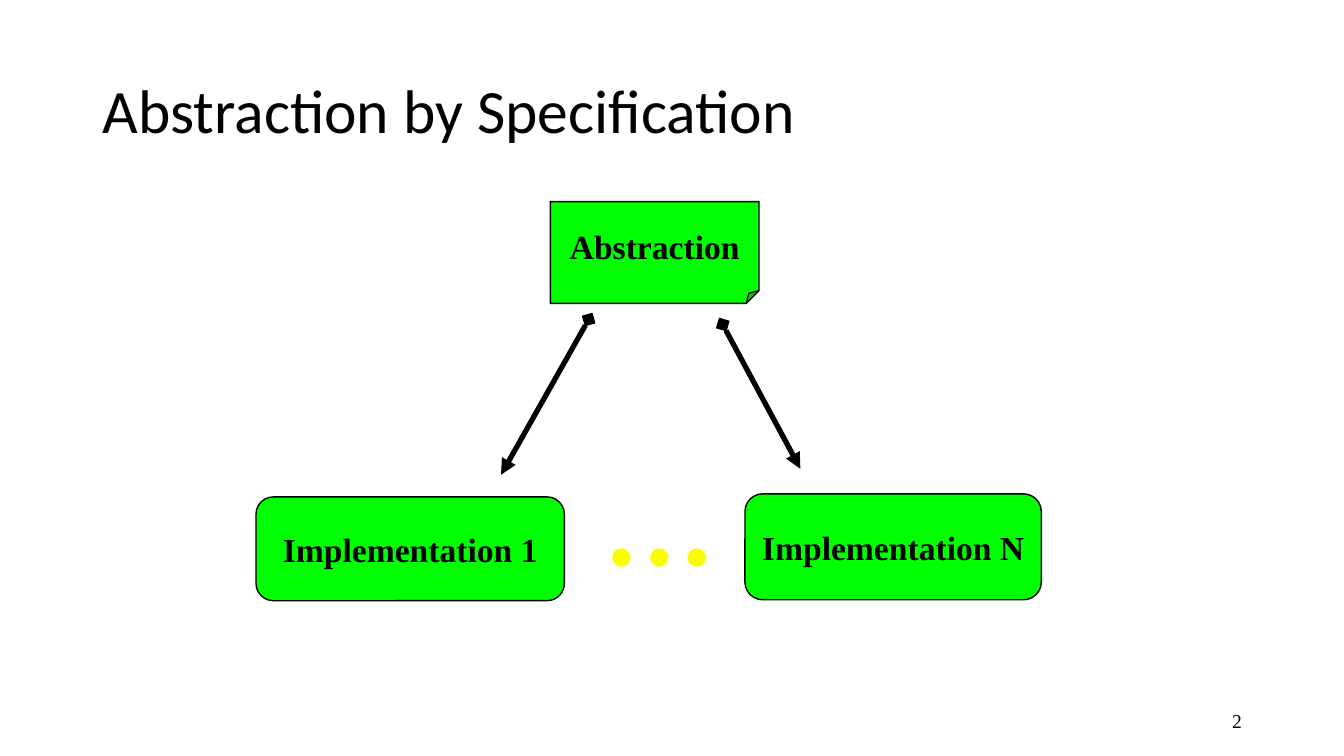
"""Build the slide on abstraction by specification."""
import pptx
import pptx.dml.color
import pptx.enum.shapes
import pptx.enum.text
import pptx.oxml
import pptx.oxml.ns
import pptx.util
from lxml import etree

SHAPE = pptx.enum.shapes.MSO_SHAPE
ALIGN = pptx.enum.text.PP_ALIGN
ANCHOR = pptx.enum.text.MSO_ANCHOR
SERIF = "Times New Roman"

prs = pptx.Presentation()
prs.slide_width = pptx.util.Inches(13.33)
prs.slide_height = pptx.util.Inches(7.5)
s = prs.slides.add_slide(prs.slide_layouts[6])
col, row = prs.slide_width / 100, prs.slide_height / 100


def rgb(value):
    return pptx.dml.color.RGBColor.from_string(value)


def write(sp, text, size, font=SERIF, color="000000", bold=False,
          align=ALIGN.LEFT, anchor=ANCHOR.MIDDLE, wrap=True):
    tf = sp.text_frame
    tf.word_wrap = wrap
    tf.vertical_anchor = anchor
    p = tf.paragraphs[0]
    p.alignment = align
    r = p.add_run()
    r.text = text
    r.font.name = font
    r.font.size = pptx.util.Pt(size)
    r.font.bold = bold
    r.font.color.rgb = rgb(color)
    return p


texts = [
    ("2", (70.65, 92.67, 22.5, 5.33), dict(size=14, align=ALIGN.RIGHT)),
    ("Abstraction by Specification", (6.9, 5.33, 86.25, 19.33),
     dict(size=44, font="Calibri")),
    ("…", (44.18, 59.33, 10.35, 19.07),
     dict(size=80, color="FAFD00", bold=True, anchor=ANCHOR.TOP)),
]
for text, (x, y, w, h), style in texts:
    sp = s.shapes.add_textbox(int(x * col), int(y * row), int(w * col), int(h * row))
    p = write(sp, text, **style)
    if style["size"] == 44:
        p.line_spacing = 0.9

boxes = [
    ("Abstraction", SHAPE.FOLDED_CORNER, 12500, (40.95, 26.67, 15.53, 13.47)),
    ("Implementation 1", SHAPE.ROUNDED_RECTANGLE, 16667, (19.05, 65.73, 22.95, 13.73)),
    ("Implementation N", SHAPE.ROUNDED_RECTANGLE, 16667, (55.43, 65.33, 22.05, 14)),
]
for text, kind, corner, (x, y, w, h) in boxes:
    sp = s.shapes.add_shape(kind, int(x * col), int(y * row), int(w * col), int(h * row))
    guides = sp._element.spPr.find(".//" + pptx.oxml.ns.qn("a:avLst"))
    guides.clear()
    etree.SubElement(guides, pptx.oxml.ns.qn("a:gd"), name="adj", fmla=f"val {corner}")
    sp.shadow.inherit = False
    sp.fill.solid()
    sp.fill.fore_color.rgb = rgb("00FF00")
    sp.line.color.rgb = rgb("000000")
    sp.line.width = pptx.util.Pt(1)
    write(sp, text, 24, bold=True, align=ALIGN.CENTER, wrap=False)

arrows = [(43.8, 42.27, 37.28, 62.8), (53.78, 42.93, 59.55, 62)]
for x1, y1, x2, y2 in arrows:
    line = s.shapes.add_connector(
        pptx.enum.shapes.MSO_CONNECTOR.STRAIGHT,
        int(x1 * col), int(y1 * row), int(x2 * col), int(y2 * row))
    line.line.color.rgb = rgb("000000")
    line.line.width = pptx.util.Pt(3.75)
    ln = line.line._get_or_add_ln()
    for tag, end in (("a:headEnd", "diamond"), ("a:tailEnd", "triangle")):
        etree.SubElement(ln, pptx.oxml.ns.qn(tag), type=end)
    etree.SubElement(line._element.spPr, pptx.oxml.ns.qn("a:effectLst"))

prs.save("out.pptx")
